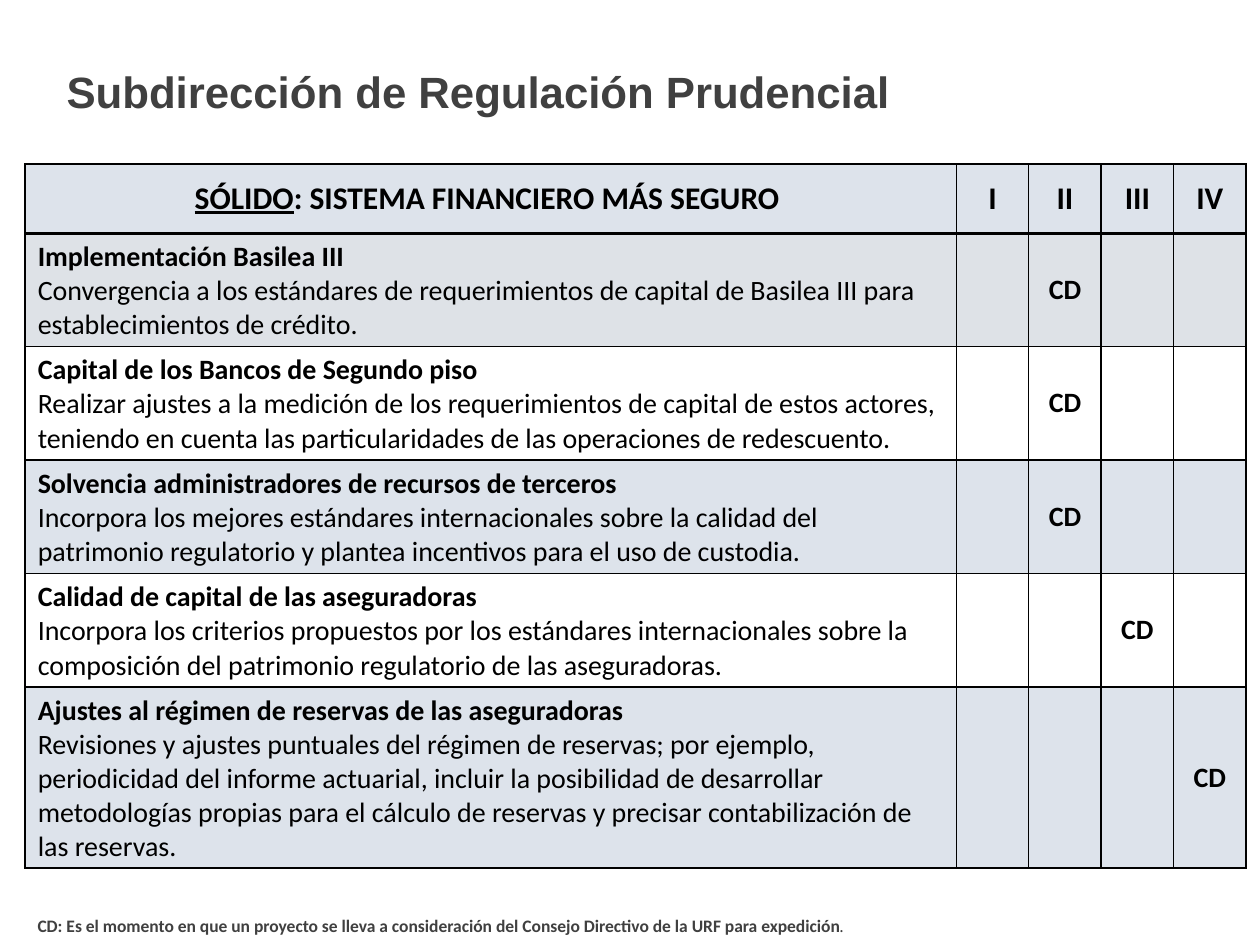
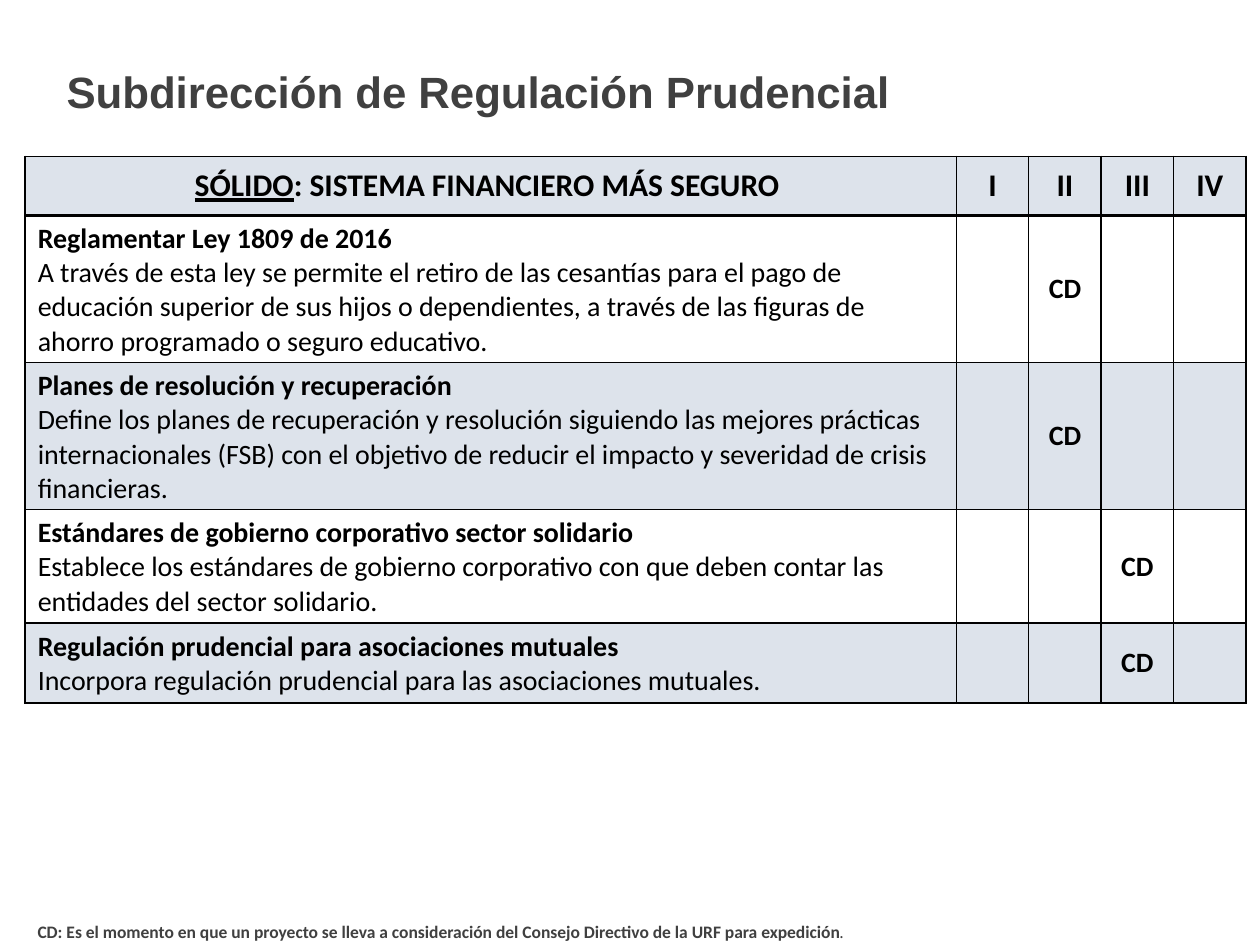
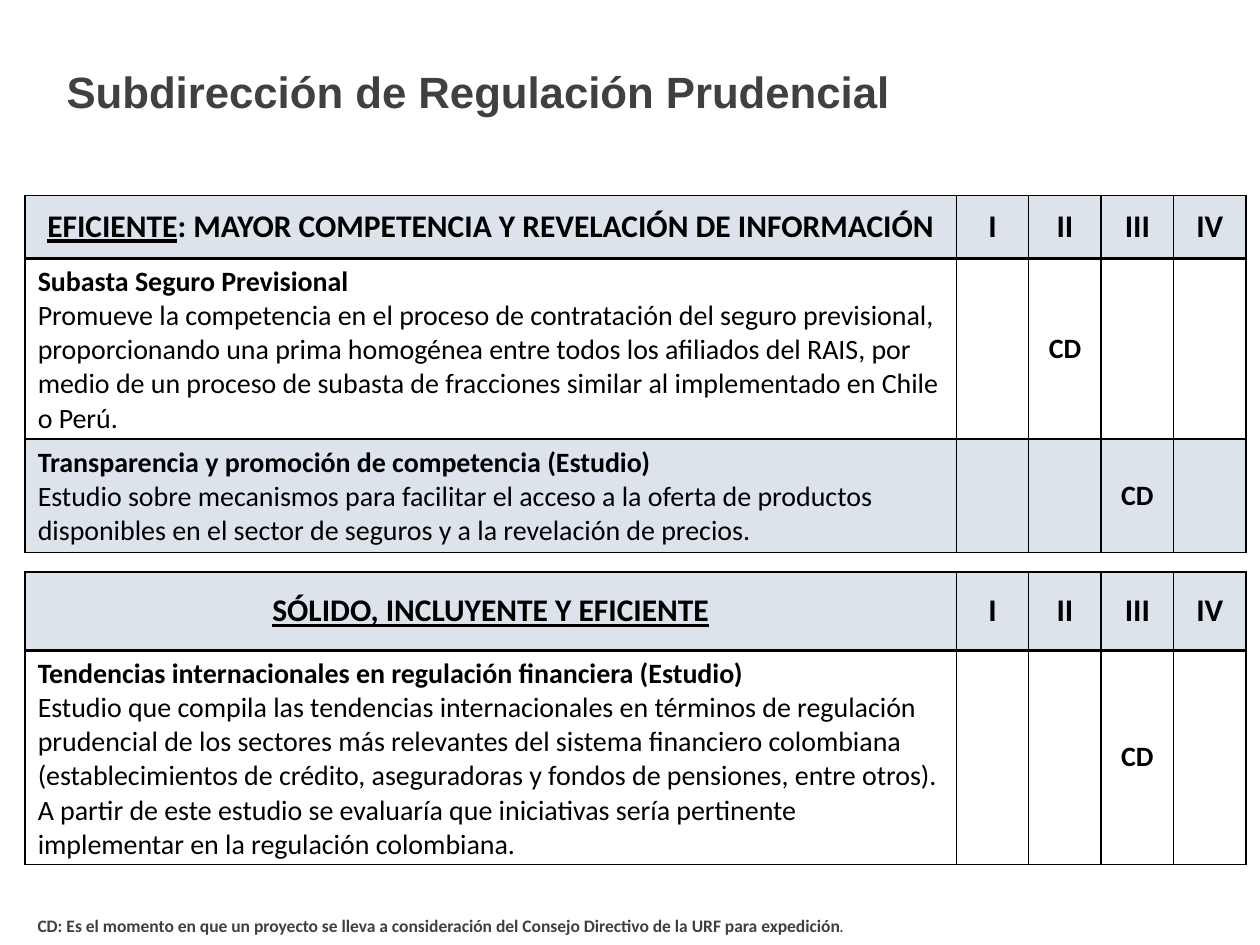
from dataclasses import dataclass

from lxml.etree import SubElement
from pptx import Presentation
from pptx.dml.color import RGBColor as Color
from pptx.enum.text import MSO_ANCHOR as Anchor, MSO_AUTO_SIZE as AutoSize, PP_ALIGN as Align
from pptx.oxml import parse_xml
from pptx.oxml.ns import nsdecls, qn
from pptx.util import Inches, Pt


@dataclass(frozen=True)
class Theme:
    """Colours, fonts and sizes shared by every slide."""
    black: str = "000000"
    grey: str = "404040"
    navy: str = "1F497D"
    slate: str = "254061"
    white: str = "FFFFFF"
    opacity: int = 15
    title_font: str = "Arial"
    body_font: str = "Calibri"
    title_size: float = 25
    heading_size: float = 18
    body_size: float = 16
    note_size: float = 10
    thin: float = 1
    thick: float = 2


THEME = Theme()
COLUMNS, ROWS = 100, 75
TABLE_LEFT, TOPIC_WIDTH, QUARTER_WIDTH = 2, 73.9, 5.75
LINE_HEIGHT, CELL_PADDING = 2.67, 1
QUARTERS = ("I", "II", "III", "IV")
TITLE = "Subdirección de Regulación Prudencial"
NOTE = ("CD: Es el momento en que un proyecto se lleva a consideración del Consejo "
        "Directivo de la URF para expedición")


@dataclass(frozen=True)
class Project:
    """A table row: topic, description, its lines, quarter and tint."""
    topic: str
    description: str
    lines: int
    quarter: str
    tint: str = THEME.white


class AgendaDeck:
    """Draws titles, notes and quarterly agendas on the current slide."""

    def __init__(self, presentation, theme):
        self.presentation = presentation
        self.theme = theme
        self.slide = None

    def across(self, columns):
        """Turn grid columns into a length."""
        return round(self.presentation.slide_width * columns / COLUMNS)

    def down(self, rows):
        """Turn grid rows into a length."""
        return round(self.presentation.slide_height * rows / ROWS)

    def box(self, left, top, width, height):
        """Turn a grid area into left, top, width and height."""
        return self.across(left), self.down(top), self.across(width), self.down(height)

    def add_slide(self, note_top):
        """Start a blank slide with the shared title and note."""
        self.slide = self.presentation.slides.add_slide(self.presentation.slide_layouts[6])
        self.title()
        self.note(note_top)

    def style(self, run, size, color, bold=True, font=None, underline=False):
        """Set the font of one run."""
        run.font.name = font or self.theme.body_font
        run.font.size = Pt(size)
        run.font.bold = bold
        run.font.underline = underline
        run.font.color.rgb = Color.from_string(color)

    def text_box(self, area, text):
        """Add a wrapping text box and return its text frame."""
        text_frame = self.slide.shapes.add_textbox(*self.box(*area)).text_frame
        text_frame.word_wrap = True
        text_frame.text = text
        return text_frame

    def title(self):
        """Add the slide title."""
        text_frame = self.text_box((4.3, 2.1, 69.3, 10.2), TITLE)
        text_frame.vertical_anchor = Anchor.MIDDLE
        self.style(text_frame.paragraphs[0].runs[0], self.theme.title_size,
                   self.theme.grey, font=self.theme.title_font)

    def note(self, top):
        """Add the note that explains the CD mark."""
        text_frame = self.text_box((TABLE_LEFT, top, 95.3, 2.7), NOTE)
        text_frame.auto_size = AutoSize.SHAPE_TO_FIT_TEXT
        paragraph = text_frame.paragraphs[0]
        paragraph.add_run().text = "."
        for run, bold in zip(paragraph.runs, (True, False)):
            self.style(run, self.theme.note_size, self.theme.grey, bold)

    def agenda(self, top, heading_height, heading, projects):
        """Add a table that marks each project in its quarter."""
        heights = [heading_height] + [
            CELL_PADDING + LINE_HEIGHT * (project.lines + 1) for project in projects]
        widths = [TOPIC_WIDTH] + [QUARTER_WIDTH] * len(QUARTERS)
        area = self.box(TABLE_LEFT, top, sum(widths), sum(heights))
        table = self.slide.shapes.add_table(len(heights), len(widths), *area).table
        table.first_row = table.horz_banding = False
        for column, width in zip(table.columns, widths):
            column.width = self.across(width)
        for row, height in zip(table.rows, heights):
            row.height = self.down(height)

        tints = [self.theme.navy] + [project.tint for project in projects]
        for index, (row, tint) in enumerate(zip(table.rows, tints)):
            for cell in row.cells:
                self.tint(cell, tint)
                self.borders(cell, above=index == 1, below=index == 0)

        self.heading(table.cell(0, 0), *heading)
        for column, quarter in enumerate(QUARTERS, 1):
            self.mark(table.cell(0, column), quarter, self.theme.heading_size)
        for row, project in enumerate(projects, 1):
            self.topic(table.cell(row, 0), project)
            column = QUARTERS.index(project.quarter) + 1
            self.mark(table.cell(row, column), "CD", self.theme.body_size)

    def mark(self, cell, text, size):
        """Write centred bold text in a cell and return its paragraph."""
        cell.vertical_anchor = Anchor.MIDDLE
        cell.text_frame.text = text
        paragraph = cell.text_frame.paragraphs[0]
        paragraph.alignment = Align.CENTER
        self.style(paragraph.runs[0], size, self.theme.black)
        return paragraph

    def heading(self, cell, goal, rest=""):
        """Write a table heading with its goal underlined."""
        paragraph = self.mark(cell, goal, self.theme.heading_size)
        paragraph.runs[0].font.underline = True
        if rest:
            run = paragraph.add_run()
            run.text = rest
            self.style(run, self.theme.heading_size, self.theme.black)

    def topic(self, cell, project):
        """Write a bold topic above its description."""
        cell.text_frame.text = f"{project.topic}\n{project.description}"
        for paragraph, bold in zip(cell.text_frame.paragraphs, (True, False)):
            self.style(paragraph.runs[0], self.theme.body_size, self.theme.black, bold)

    def tint(self, cell, color):
        """Fill a cell with a translucent colour."""
        cell.fill.solid()
        cell.fill.fore_color.rgb = Color.from_string(color)
        properties = cell._tc.get_or_add_tcPr()
        color_element = properties.find(qn("a:solidFill")).find(qn("a:srgbClr"))
        SubElement(color_element, qn("a:alpha"), val=str(self.theme.opacity * 1000))

    def borders(self, cell, above, below):
        """Draw the cell borders, thick beside the heading rule."""
        properties = cell._tc.get_or_add_tcPr()
        for position, (side, thick) in enumerate(
                (("L", False), ("R", False), ("T", above), ("B", below))):
            width = Pt(self.theme.thick if thick else self.theme.thin)
            properties.insert(position, parse_xml(
                f'<a:ln{side} {nsdecls("a")} w="{width}"><a:solidFill>'
                f'<a:srgbClr val="{self.theme.black}"/></a:solidFill></a:ln{side}>'))


SAFER = ("SÓLIDO", ": SISTEMA FINANCIERO MÁS SEGURO ")
COMPETITIVE = ("EFICIENTE", ": MAYOR COMPETENCIA Y REVELACIÓN DE INFORMACIÓN")
COMBINED = ("SÓLIDO, INCLUYENTE Y EFICIENTE",)

CAPITAL_PROJECTS = (
    Project("Implementación Basilea III",
            "Convergencia a los estándares de requerimientos de capital de Basilea III para "
            "establecimientos de crédito.", 2, "II", THEME.slate),
    Project("Capital de los Bancos de Segundo piso",
            "Realizar ajustes a la medición de los requerimientos de capital de estos actores, "
            "teniendo en cuenta las particularidades de las operaciones de redescuento.",
            2, "II"),
    Project("Solvencia administradores de recursos de terceros",
            "Incorpora los mejores estándares internacionales sobre la calidad del patrimonio "
            "regulatorio y plantea incentivos para el uso de custodia.", 2, "II", THEME.navy),
    Project("Calidad de capital de las aseguradoras",
            "Incorpora los criterios propuestos por los estándares internacionales sobre la "
            "composición del patrimonio regulatorio de las aseguradoras.", 2, "III"),
    Project("Ajustes al régimen de reservas de las aseguradoras",
            "Revisiones y ajustes puntuales del régimen de reservas; por ejemplo, periodicidad "
            "del informe actuarial, incluir la posibilidad de desarrollar metodologías propias "
            "para el cálculo de reservas y precisar contabilización de las reservas.",
            4, "IV", THEME.navy),
)
RESILIENCE_PROJECTS = (
    Project("Reglamentar Ley 1809 de 2016",
            "A través de esta ley se permite el retiro de las cesantías para el pago de "
            "educación superior de sus hijos o dependientes, a través de las figuras de ahorro "
            "programado o seguro educativo.", 3, "II"),
    Project("Planes de resolución y recuperación",
            "Define los planes de recuperación y resolución siguiendo las mejores prácticas "
            "internacionales (FSB) con el objetivo de reducir el impacto y severidad de crisis "
            "financieras.", 3, "II", THEME.navy),
    Project("Estándares de gobierno corporativo sector solidario",
            "Establece los estándares de gobierno corporativo con que deben contar las "
            "entidades del sector solidario.", 2, "III"),
    Project("Regulación prudencial para asociaciones mutuales",
            "Incorpora regulación prudencial para las asociaciones mutuales.",
            1, "III", THEME.navy),
)
COMPETITION_PROJECTS = (
    Project("Subasta Seguro Previsional",
            "Promueve la competencia en el proceso de contratación del seguro previsional, "
            "proporcionando una prima homogénea entre todos los afiliados del RAIS, por medio "
            "de un proceso de subasta de fracciones similar al implementado en Chile o Perú.",
            4, "II"),
    Project("Transparencia y promoción de competencia (Estudio)",
            "Estudio sobre mecanismos para facilitar el acceso a la oferta de productos "
            "disponibles en el sector de seguros y a la revelación de precios.",
            2, "III", THEME.navy),
)
TREND_PROJECTS = (
    Project("Tendencias internacionales en regulación financiera (Estudio)",
            "Estudio que compila las tendencias internacionales en términos de regulación "
            "prudencial de los sectores más relevantes del sistema financiero colombiana "
            "(establecimientos de crédito, aseguradoras y fondos de pensiones, entre otros). "
            "A partir de este estudio se evaluaría que iniciativas sería pertinente "
            "implementar en la regulación colombiana.", 5, "III"),
)
SLIDES = (
    (72.1, ((13, 5.5, SAFER, CAPITAL_PROJECTS),)),
    (72.6, ((12.4, 4.7, SAFER, RESILIENCE_PROJECTS),)),
    (72.1, ((15.5, 5, COMPETITIVE, COMPETITION_PROJECTS),
            (45.4, 6.2, COMBINED, TREND_PROJECTS))),
)


def main():
    """Build the three agenda slides."""
    presentation = Presentation()
    presentation.slide_width, presentation.slide_height = Inches(10), Inches(7.5)
    deck = AgendaDeck(presentation, THEME)
    for note_top, agendas in SLIDES:
        deck.add_slide(note_top)
        for agenda in agendas:
            deck.agenda(*agenda)
    presentation.save("out.pptx")


if __name__ == "__main__":
    main()
